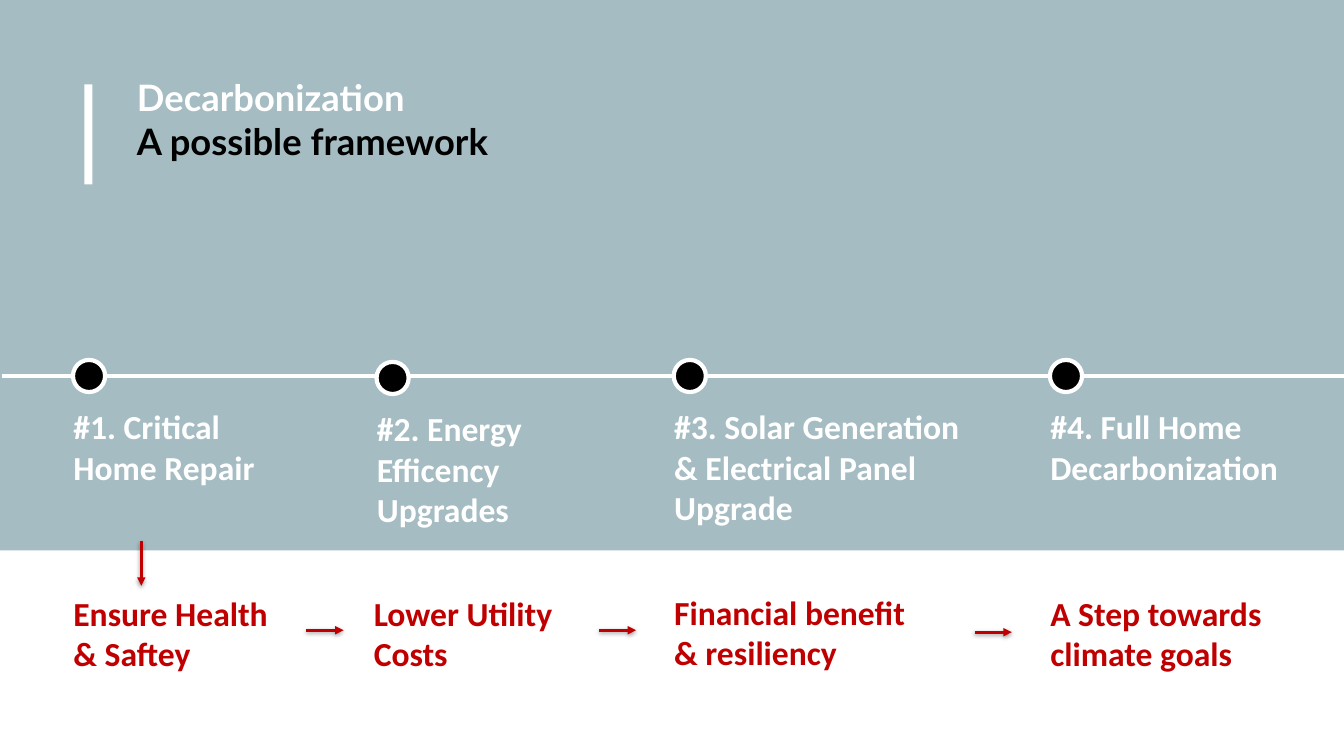
from collections import namedtuple

from lxml import etree
from pptx import Presentation
from pptx import util as u
from pptx.dml.color import RGBColor
from pptx.enum import shapes, text
from pptx.oxml import ns

COLORS = {"band": "A4BCC2", "light": "FFFFFF", "dark": "000000", "benefit": "C00000"}
Box = namedtuple("Box", "left top width height")
Stage = namedtuple("Stage", "label left width drop benefit benefit_left benefit_width benefit_top arrow")

STAGES = [
    Stage("#1. Critical Home Repair", 1.52, 6.3, 0,
          "Ensure Health & Saftey", 1.52, 6.3, 14.6, (3.56, 13.64, 3.56, 14.76)),
    Stage("#2. Energy Efficency Upgrades", 9.17, 7.06, 0.05,
          "Lower Utility Costs", 9.09, 5.84, 14.6, (7.72, 15.88, 8.66, 15.88)),
    Stage("#3. Solar Generation & Electrical Panel Upgrade", 16.66, 7.92, 0,
          "Financial benefit & resiliency", 16.66, 7.11, 14.58, (15.09, 15.88, 16.03, 15.88)),
    Stage("#4. Full Home Decarbonization", 26.14, 6.81, 0,
          "A Step towards climate goals", 26.14, 7.11, 14.6, (24.56, 15.93, 25.5, 15.93)),
]


def color(name):
    return RGBColor.from_string(COLORS[name])


def cm_all(lengths):
    return [u.Cm(length) for length in lengths]


def style_span(span, font, size, color_name):
    span.font.name = font
    span.font.size = u.Pt(size)
    span.font.bold = True
    span.font.color.rgb = color(color_name)


def set_frame(frame):
    frame.word_wrap = True
    frame.auto_size = text.MSO_AUTO_SIZE.NONE
    frame.vertical_anchor = text.MSO_ANCHOR.TOP
    frame.margin_left = frame.margin_right = u.Cm(0.33)
    frame.margin_top = frame.margin_bottom = u.Cm(0.33)


def add_solid(page, kind, box, fill, outline=None):
    shape = page.shapes.add_shape(kind, *cm_all(box))
    shape.shadow.inherit = False
    shape.fill.solid()
    shape.fill.fore_color.rgb = color(fill)
    if outline:
        shape.line.color.rgb = color(outline)
        shape.line.width = u.Pt(3)
    else:
        shape.line.fill.background()
    return shape


def add_line(page, ends, color_name, width):
    line = page.shapes.add_connector(shapes.MSO_CONNECTOR.STRAIGHT, *cm_all(ends))
    line.line.color.rgb = color(color_name)
    line.line.width = u.Pt(width)
    effects = etree.SubElement(line.element.spPr, ns.qn("a:effectLst"))
    return line, effects


def add_arrow(page, ends):
    line, effects = add_line(page, ends, "benefit", 2)
    outline = line.element.spPr.find(ns.qn("a:ln"))
    etree.SubElement(outline, ns.qn("a:tailEnd"), type="triangle")
    shadow = etree.SubElement(effects, ns.qn("a:outerShdw"), blurRad=str(u.Pt(3.1)),
                              dist=str(u.Pt(1.6)), dir="5400000", rotWithShape="0")
    tint = etree.SubElement(shadow, ns.qn("a:srgbClr"), val=COLORS["dark"])
    etree.SubElement(tint, ns.qn("a:alpha"), val="38000")


def add_caption(page, box, words, color_name):
    caption = page.shapes.add_textbox(*cm_all(box))
    set_frame(caption.text_frame)
    caption.text_frame.text = words
    style_span(caption.text_frame.paragraphs[0].runs[0], "Calibri", 24, color_name)


def add_heading(page, box):
    title = page.shapes.title
    band = add_solid(page, shapes.MSO_SHAPE.RECTANGLE, box, "band")
    title.element.addprevious(band.element)
    mark = Box(box.left + 2.13, box.top + 2.13, 0.2, 2.52)
    add_solid(page, shapes.MSO_SHAPE.RECTANGLE, mark, "light")
    title.left, title.top, title.width, title.height = cm_all(
        (box.left + 3.12, box.top + 1.57, 11.96, 3.18))
    set_frame(title.text_frame)
    para = title.text_frame.paragraphs[0]
    para.text = "Decarbonization\vA possible framework"
    para.alignment = text.PP_ALIGN.LEFT
    para.line_spacing = 1.0
    for span, color_name in zip(para.runs, ("light", "dark")):
        style_span(span, "Lato", 26, color_name)


def add_timeline(page, box):
    middle = box.top + 0.4
    add_line(page, (box.left + 0.05, middle, box.left + box.width, middle), "light", 3)
    for stage in STAGES:
        left, top = box.left + stage.left, box.top + stage.drop
        dot = Box(left + 0.32, top, 0.81, 0.81)
        add_solid(page, shapes.MSO_SHAPE.OVAL, dot, "dark", "light")
        add_caption(page, Box(left, top + 0.84, stage.width, 1.52), stage.label, "light")


def add_benefits(page):
    for stage in STAGES:
        box = Box(stage.benefit_left, stage.benefit_top, stage.benefit_width, 1.52)
        add_caption(page, box, stage.benefit, "benefit")
        add_arrow(page, stage.arrow)


def main():
    deck = Presentation()
    deck.slide_width, deck.slide_height = cm_all((33.87, 19.05))
    page = deck.slides.add_slide(deck.slide_layouts.get_by_name("Title Only"))
    page.background.fill.solid()
    page.background.fill.fore_color.rgb = color("light")
    add_heading(page, Box(0, 0, 33.87, 13.87))
    add_timeline(page, Box(0, 9.07, 33.87, 4.8))
    add_benefits(page)
    deck.save("out.pptx")


if __name__ == "__main__":
    main()
